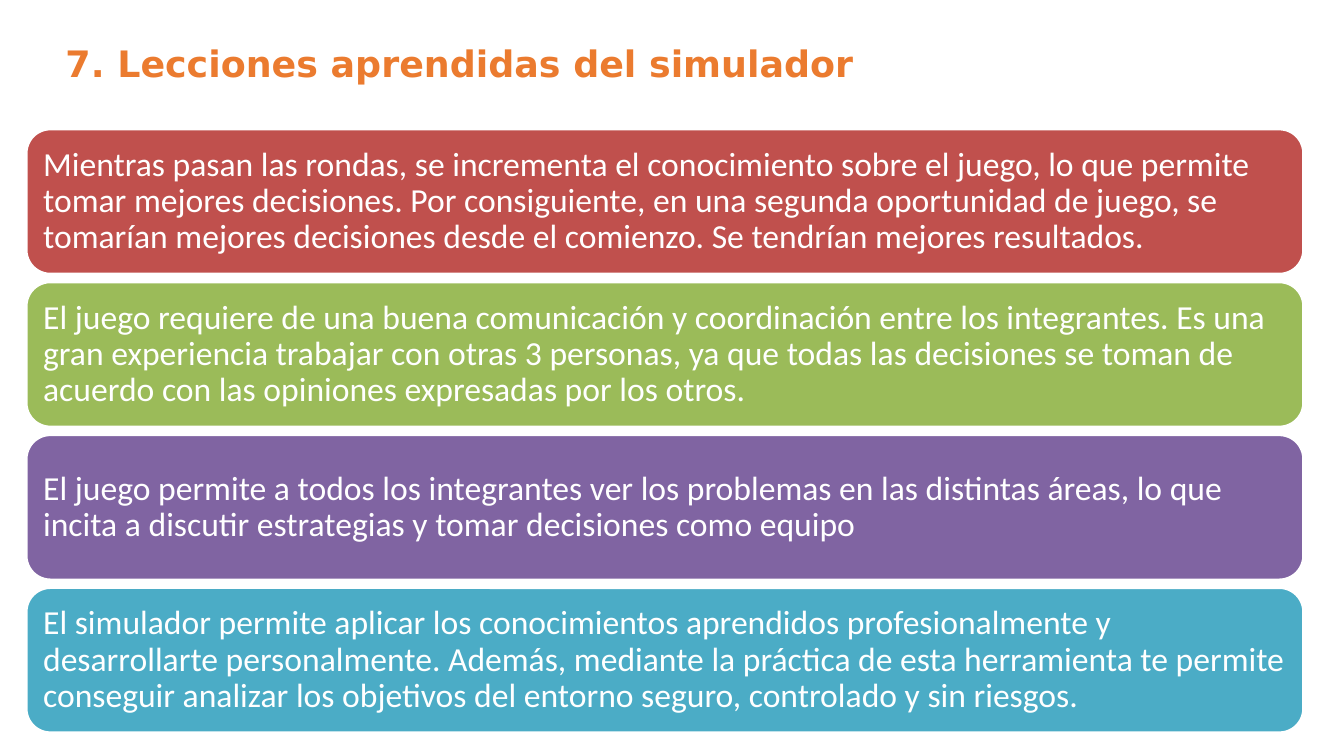
from dataclasses import dataclass

from pptx import Presentation
from pptx.dml.color import RGBColor
from pptx.enum.shapes import MSO_SHAPE
from pptx.enum.text import MSO_ANCHOR, PP_ALIGN
from pptx.util import Inches, Pt


@dataclass(frozen=True)
class Theme:
    heading: str = "EB7B2F"
    light: str = "FFFFFF"
    bands: tuple = ("C0504D", "9BBB59", "8064A2", "4BACC6")
    heading_font: str = "DejaVu Sans"
    body_font: str = "Calibri"
    heading_size: int = 26
    body_size: int = 24


theme = Theme()

LESSONS = [
    "Mientras pasan las rondas, se incrementa el conocimiento sobre el juego, "
    "lo que permite tomar mejores decisiones. Por consiguiente, en una segunda "
    "oportunidad de juego, se tomarían mejores decisiones desde el comienzo. "
    "Se tendrían mejores resultados.",
    "El juego requiere de una buena comunicación y coordinación entre los "
    "integrantes. Es una gran experiencia trabajar con otras 3 personas, ya que "
    "todas las decisiones se toman de acuerdo con las opiniones expresadas por "
    "los otros.",
    "El juego permite a todos los integrantes ver los problemas en las distintas "
    "áreas, lo que incita a discutir estrategias y tomar decisiones como equipo",
    "El simulador permite aplicar los conocimientos aprendidos profesionalmente y "
    "desarrollarte personalmente. Además, mediante la práctica de esta herramienta "
    "te permite conseguir analizar los objetivos del entorno seguro, controlado y "
    "sin riesgos.",
]


def write(frame, text, font, size, color, inset, bold=False):
    """Fill a frame with one left-aligned run and return its paragraph."""
    frame.word_wrap = True
    frame.margin_left = frame.margin_right = Inches(inset)
    frame.margin_top = frame.margin_bottom = Inches(inset)
    paragraph = frame.paragraphs[0]
    paragraph.alignment = PP_ALIGN.LEFT
    run = paragraph.add_run()
    run.text = text
    run.font.name = font
    run.font.size = Pt(size)
    run.font.bold = bold
    run.font.color.rgb = RGBColor.from_string(color)
    return paragraph


deck = Presentation()
deck.slide_width, deck.slide_height = Inches(13.33), Inches(7.5)
slide = deck.slides.add_slide(deck.slide_layouts[6])

heading = slide.shapes.add_textbox(Inches(0.65), Inches(0.41), Inches(12.04), Inches(0.44))
write(heading.text_frame, "7. Lecciones aprendidas del simulador",
      theme.heading_font, theme.heading_size, theme.heading, inset=0, bold=True)

# Lesson bands: one column, equal rows
band_left, band_width = Inches(0.26), Inches(12.67)
first_top, last_top, band_height = Inches(1.28), Inches(5.83), Inches(1.44)
row_pitch = (last_top - first_top) // (len(LESSONS) - 1)

for row, (lesson, color) in enumerate(zip(LESSONS, theme.bands)):
    band = slide.shapes.add_shape(MSO_SHAPE.ROUNDED_RECTANGLE, band_left,
                                  first_top + row * row_pitch, band_width, band_height)
    band.shadow.inherit = False
    band.fill.solid()
    band.fill.fore_color.rgb = RGBColor.from_string(color)
    band.line.color.rgb = RGBColor.from_string(theme.light)
    band.line.width = Pt(2)
    band.text_frame.vertical_anchor = MSO_ANCHOR.MIDDLE
    paragraph = write(band.text_frame, lesson, theme.body_font, theme.body_size,
                      theme.light, inset=0.1)
    paragraph.line_spacing = 0.9

deck.save("out.pptx")
